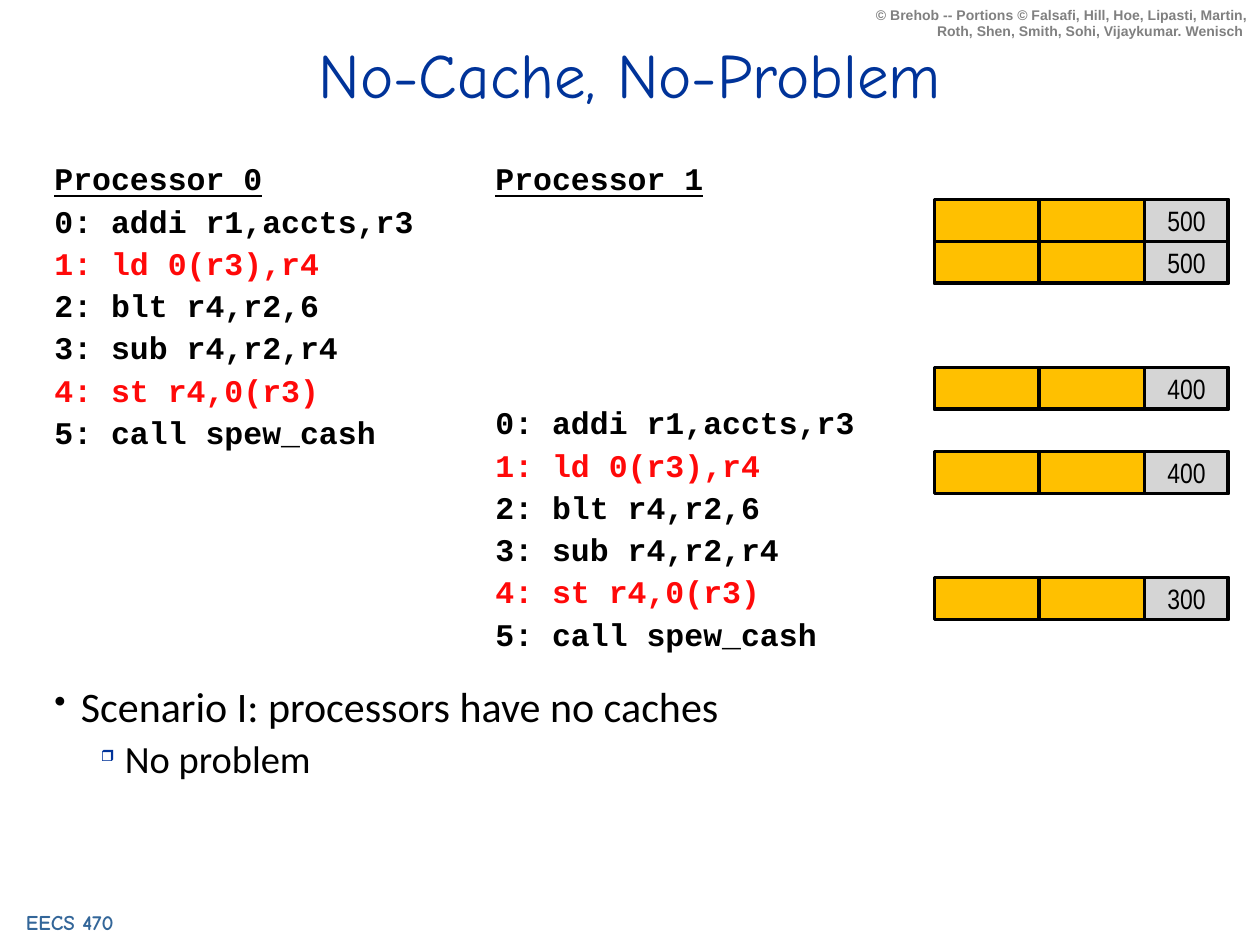
from lxml.etree import SubElement
from pptx import Presentation
from pptx.dml.color import RGBColor
from pptx.enum.shapes import MSO_SHAPE as Shape
from pptx.enum.text import MSO_ANCHOR as Anchor, PP_ALIGN as Align
from pptx.oxml.ns import qn
from pptx.util import Inches, Pt

# The slide is a grid of 120 columns by 90 rows, twelve to the inch
COLS, ROWS, UNIT = 120, 90, Inches(1) / 12

BLACK, RED, NAVY = "000000", "FF0909", "003399"
GOLD, SILVER = "FFC000", "D5D5D5"

TITLE = {"name": "Comic Neue", "size": Pt(36), "bold": False}
COURSE = {"name": "Comic Neue", "size": Pt(12), "bold": True}
CREDIT = {"name": "Arial", "size": Pt(8), "bold": True}
CODE = {"name": "Courier New", "size": Pt(18), "bold": True}
VALUE = {"name": "Arial Narrow", "size": Pt(16)}
POINT = {"name": "Calibri", "size": Pt(24)}
SUB = {"name": "Calibri", "size": Pt(22)}

# Each instruction, and whether it touches memory
STEPS = [
    ("0: addi r1,accts,r3", False),
    ("1: ld 0(r3),r4", True),
    ("2: blt r4,r2,6", False),
    ("3: sub r4,r2,r4", False),
    ("4: st r4,0(r3)", True),
    ("5: call spew_cash", False),
]
GAP, PITCH = 4.7, 23.05  # points before a code line, and from line to line

# Memory value by row of the state column
STATES = {0: 500, 1: 500, 4: 400, 6: 400, 9: 300}


def grid(*cells):
    return [round(cell * UNIT) for cell in cells]


def paint(color, value):
    color.rgb = RGBColor.from_string(value)


def write(par, text, style, color, **more):
    run = par.add_run()
    run.text = text
    for key, val in {**style, **more}.items():
        setattr(run.font, key, val)
    paint(run.font.color, color)


def add_box(slide, *area):
    frame = slide.shapes.add_textbox(*grid(*area)).text_frame
    frame.word_wrap = True
    return frame


def indent(par, left, hang):
    props = par._p.get_or_add_pPr()
    props.set("marL", str(Inches(left)))
    props.set("indent", str(-Inches(hang)))
    return props


def add_label(slide, area, text, style, color, align):
    par = add_box(slide, *area).paragraphs[0]
    par.alignment = align
    write(par, text, style, color)


def add_title(slide, text):
    title = slide.shapes.title
    title.left, title.top, title.width, title.height = grid(4.5, 3, 111, 8)
    par = title.text_frame.paragraphs[0]
    par.alignment = Align.CENTER
    write(par, text, TITLE, NAVY)


def add_code(slide, left, height, head, skip):
    """List the steps under a heading, starting after some skipped lines."""
    frame = add_box(slide, left, 15, 43, height)
    write(frame.paragraphs[0], head, CODE, BLACK, underline=True)
    for text, memory in STEPS:
        write(frame.add_paragraph(), text, CODE, RED if memory else BLACK)
    for par in frame.paragraphs:
        indent(par, 0.38, 0.38)
        par.line_spacing = 0.9
        par.space_before = Pt(GAP)
    frame.paragraphs[1].space_before = Pt(GAP + skip * PITCH)


def add_cell(slide, left, top, width, fill, text=""):
    cell = slide.shapes.add_shape(Shape.RECTANGLE, *grid(left, top, width, 4))
    cell.shadow.inherit = False
    cell.fill.solid()
    paint(cell.fill.fore_color, fill)
    paint(cell.line.color, BLACK)
    cell.line.width = Pt(2.25)
    if text:
        frame = cell.text_frame
        frame.word_wrap = False
        frame.vertical_anchor = Anchor.MIDDLE
        frame.paragraphs[0].alignment = Align.CENTER
        write(frame.paragraphs[0], text, VALUE, BLACK)


def add_state(slide, row, value):
    """Two empty caches and the memory value."""
    top = 19 + 4 * row
    add_cell(slide, 89, top, 10, GOLD)
    add_cell(slide, 109, top, 8, SILVER, str(value))
    add_cell(slide, 99, top, 10, GOLD)


def add_bullet(par, text, style, mark, tint, share, left, hang, before):
    par.line_spacing = style["size"]
    par.space_before = Pt(before)
    props = indent(par, left, hang)
    color = SubElement(props, qn("a:buClr"))
    SubElement(color, qn("a:srgbClr"), val=tint)
    SubElement(props, qn("a:buSzPct"), val=str(share * 1000))
    SubElement(props, qn("a:buChar"), char=mark)
    write(par, text, style, BLACK)


def main():
    deck = Presentation()
    deck.slide_width, deck.slide_height = grid(COLS, ROWS)
    slide = deck.slides.add_slide(deck.slide_layouts[5])

    # Title, course and credit
    add_title(slide, "No-Cache, No-Problem")
    add_label(slide, (-1, 86, 16, 3.6), "EECS 470 ", COURSE, "336699",
              Align.CENTER)
    add_label(slide, (82, 0, 38, 4.4),
              "© Brehob -- Portions © Falsafi, Hill, Hoe, Lipasti, Martin, "
              "Roth, Shen, Smith, Sohi, Vijaykumar. Wenisch ",
              CREDIT, "808080", Align.RIGHT)

    # Scenario
    frame = add_box(slide, 4, 65, 112, 17)
    add_bullet(frame.paragraphs[0], "Scenario I: processors have no caches",
               POINT, "•", BLACK, 80, 0.21, 0.21, 15)
    par = frame.add_paragraph()
    par.level = 1
    add_bullet(par, "No problem", SUB, "❒", NAVY, 40, 0.56, 0.19, 7)

    # Code of both processors: the second starts as the first ends
    add_code(slide, 4, 28, "Processor 0", 0)
    add_code(slide, 46, 48, "Processor 1", len(STEPS) - 1)

    # Caches and memory
    for row, value in STATES.items():
        add_state(slide, row, value)

    deck.save("out.pptx")


if __name__ == "__main__":
    main()
